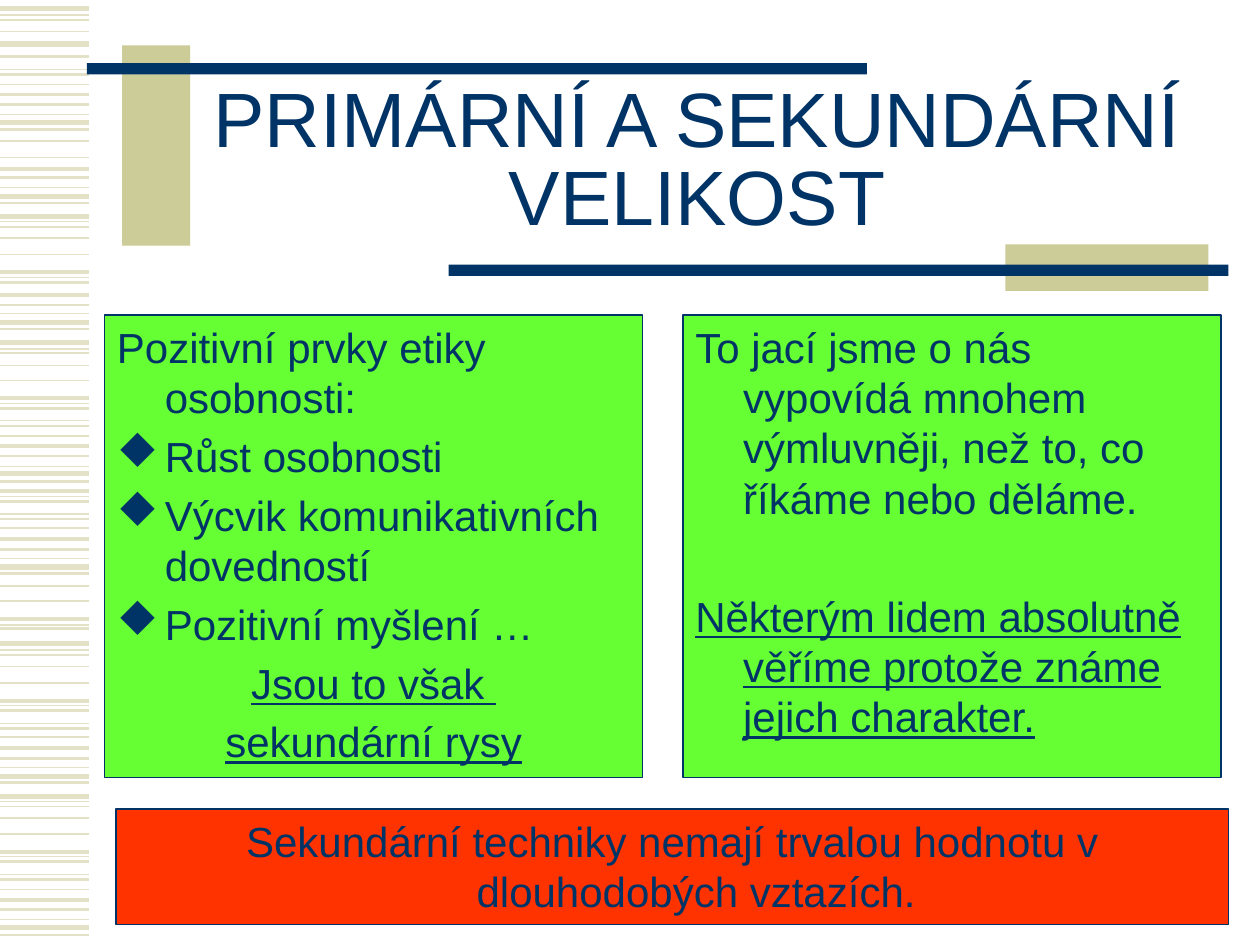
from dataclasses import dataclass

from lxml.etree import SubElement
from pptx import Presentation
from pptx.dml.color import RGBColor
from pptx.enum.shapes import MSO_CONNECTOR, MSO_SHAPE
from pptx.enum.text import MSO_ANCHOR, MSO_AUTO_SIZE, PP_ALIGN
from pptx.oxml.ns import qn
from pptx.util import Inches, Pt


@dataclass(frozen=True)
class Theme:
    navy: RGBColor = RGBColor(0x00, 0x33, 0x66)
    khaki: RGBColor = RGBColor(0xCC, 0xCC, 0x99)
    stripe: RGBColor = RGBColor(0xE3, 0xE2, 0xC7)
    green: RGBColor = RGBColor(0x66, 0xFF, 0x33)
    red: RGBColor = RGBColor(0xFF, 0x33, 0x00)
    font: str = "Arial"
    bullet_font: str = "Wingdings"
    bullet_char: str = "u"  # the diamond in Wingdings
    title_size: float = 44
    body_size: float = 24
    space_before: float = 4.8
    section_gap: float = 38.5


THEME = Theme()
INDENT = Inches(0.38)
STRIPE_LENGTH = 0.71

# Heights of the margin stripes, by line width in points
STRIPES = {
    3: (0.07, 0.35, 0.97, 1.56, 1.72, 2.56, 2.72, 3.76, 4.5, 5.11, 6.16,
        6.32, 7.36),
    2.25: (0.75, 1.34, 2.16, 2.34, 3.16, 3.54, 3.9, 4.28, 4.91, 5.56, 5.94,
           6.76, 7.14),
    1.5: (0.45, 0.59, 0.83, 1.03, 1.41, 1.61, 2.24, 2.42, 2.61, 3.24, 3.38,
          3.62, 3.82, 3.98, 4.12, 4.36, 4.55, 4.99, 5.64, 5.78, 6.02, 6.21,
          6.84, 6.98, 7.22, 7.42),
    1: (0.16, 0.25, 0.67, 1.12, 1.25, 1.8, 1.89, 2.02, 2.8, 2.9, 3.02, 3.46,
        4.19, 4.65, 4.77, 5.2, 5.29, 5.42, 5.85, 6.4, 6.49, 6.62, 7.06),
    0.75: (0.12, 0.55, 0.91, 1.49, 1.76, 2.2, 2.49, 2.77, 3.2, 3.34, 3.7,
           3.94, 4.08, 4.43, 4.96, 5.16, 5.6, 5.74, 6.09, 6.36, 6.8, 6.94,
           7.3),
}

# Column grid of the two panels
PANEL_LEFT, PANEL_TOP, PANEL_WIDTH, PANEL_HEIGHT = 0.83, 2.5, 4.27, 3.67
COLUMN_STEP = PANEL_WIDTH + 0.32


def add_stripe(slide, y, width):
    cxn = slide.shapes.add_connector(
        MSO_CONNECTOR.STRAIGHT, 0, Inches(y), Inches(STRIPE_LENGTH), Inches(y))
    cxn.line.color.rgb = THEME.stripe
    cxn.line.width = Pt(width)
    SubElement(cxn._element.spPr, qn("a:effectLst"))


def add_rect(slide, box, fill, outlined=False):
    sp = slide.shapes.add_shape(MSO_SHAPE.RECTANGLE, *map(Inches, box))
    sp.shadow.inherit = False
    sp.fill.solid()
    sp.fill.fore_color.rgb = fill
    if outlined:
        sp.line.color.rgb = THEME.navy
        sp.line.width = Pt(0.75)
    else:
        sp.line.fill.background()
    return sp


def add_run(p, text, size, underline=None):
    r = p.add_run()
    r.text = text
    r.font.name = THEME.font
    r.font.size = Pt(size)
    r.font.color.rgb = THEME.navy
    r.font.underline = underline


def format_hanging(p, bullet):
    pPr = p._p.get_or_add_pPr()
    pPr.set("marL", str(INDENT))
    pPr.set("indent", str(-INDENT))
    if bullet:
        color = SubElement(pPr, qn("a:buClr"))
        SubElement(color, qn("a:srgbClr")).set("val", str(THEME.navy))
        font = SubElement(pPr, qn("a:buFont"))
        font.set("typeface", THEME.bullet_font)
        font.set("pitchFamily", "2")
        font.set("charset", "2")
        SubElement(pPr, qn("a:buChar")).set("char", THEME.bullet_char)
    else:
        SubElement(pPr, qn("a:buNone"))


def add_panel(slide, box, fill, paragraphs):
    """Each paragraph is its text and a dict of bullet, center, underline, before."""
    tf = add_rect(slide, box, fill, outlined=True).text_frame
    tf.word_wrap = True
    tf.vertical_anchor = MSO_ANCHOR.TOP
    for i, (text, style) in enumerate(paragraphs):
        p = tf.add_paragraph() if i else tf.paragraphs[0]
        p.alignment = PP_ALIGN.CENTER if style.get("center") else PP_ALIGN.LEFT
        p.space_before = Pt(style.get("before", THEME.space_before))
        format_hanging(p, style.get("bullet"))
        add_run(p, text, THEME.body_size, style.get("underline"))


def set_title(slide, box, text):
    sp = slide.shapes.title
    sp.left, sp.top, sp.width, sp.height = map(Inches, box)
    tf = sp.text_frame
    tf.word_wrap = True
    tf.auto_size = MSO_AUTO_SIZE.NONE
    tf.vertical_anchor = MSO_ANCHOR.MIDDLE
    p = tf.paragraphs[0]
    p.alignment = PP_ALIGN.CENTER
    p.line_spacing = 0.85
    add_run(p, text, THEME.title_size)


def add_decoration(slide):
    for width, heights in STRIPES.items():
        for y in heights:
            add_stripe(slide, y, width)
    add_rect(slide, (0.97, 0.36, 0.54, 1.59), THEME.khaki)
    add_rect(slide, (0.69, 0.5, 6.19, 0.09), THEME.navy)
    add_rect(slide, (7.98, 1.94, 1.61, 0.37), THEME.khaki)
    add_rect(slide, (3.56, 2.1, 6.19, 0.09), THEME.navy)


def main():
    prs = Presentation()
    prs.slide_width, prs.slide_height = Inches(10), Inches(7.5)
    slide = prs.slides.add_slide(prs.slide_layouts.get_by_name("Title Only"))

    add_decoration(slide)
    set_title(slide, (1.5, 0.67, 8.07, 1.25), "PRIMÁRNÍ A SEKUNDÁRNÍ VELIKOST")

    bullet = {"bullet": True}
    closing = {"center": True, "underline": True}
    columns = [
        [("Pozitivní prvky etiky osobnosti:", {}),
         ("Růst osobnosti", bullet),
         ("Výcvik komunikativních dovedností", bullet),
         ("Pozitivní myšlení …", bullet),
         ("Jsou to však ", closing),
         ("sekundární rysy", closing)],
        [("To jací jsme o nás vypovídá mnohem výmluvněji, než to, co "
          "říkáme nebo děláme.", {}),
         ("Některým lidem absolutně věříme protože známe jejich charakter.",
          {"underline": True, "before": THEME.section_gap})],
    ]
    for i, paragraphs in enumerate(columns):
        box = (PANEL_LEFT + i * COLUMN_STEP, PANEL_TOP, PANEL_WIDTH, PANEL_HEIGHT)
        add_panel(slide, box, THEME.green, paragraphs)

    add_panel(slide, (0.92, 6.42, 8.83, 0.92), THEME.red, [
        ("Sekundární techniky nemají trvalou hodnotu v dlouhodobých vztazích.",
         {"center": True})])

    prs.save("out.pptx")


if __name__ == "__main__":
    main()
